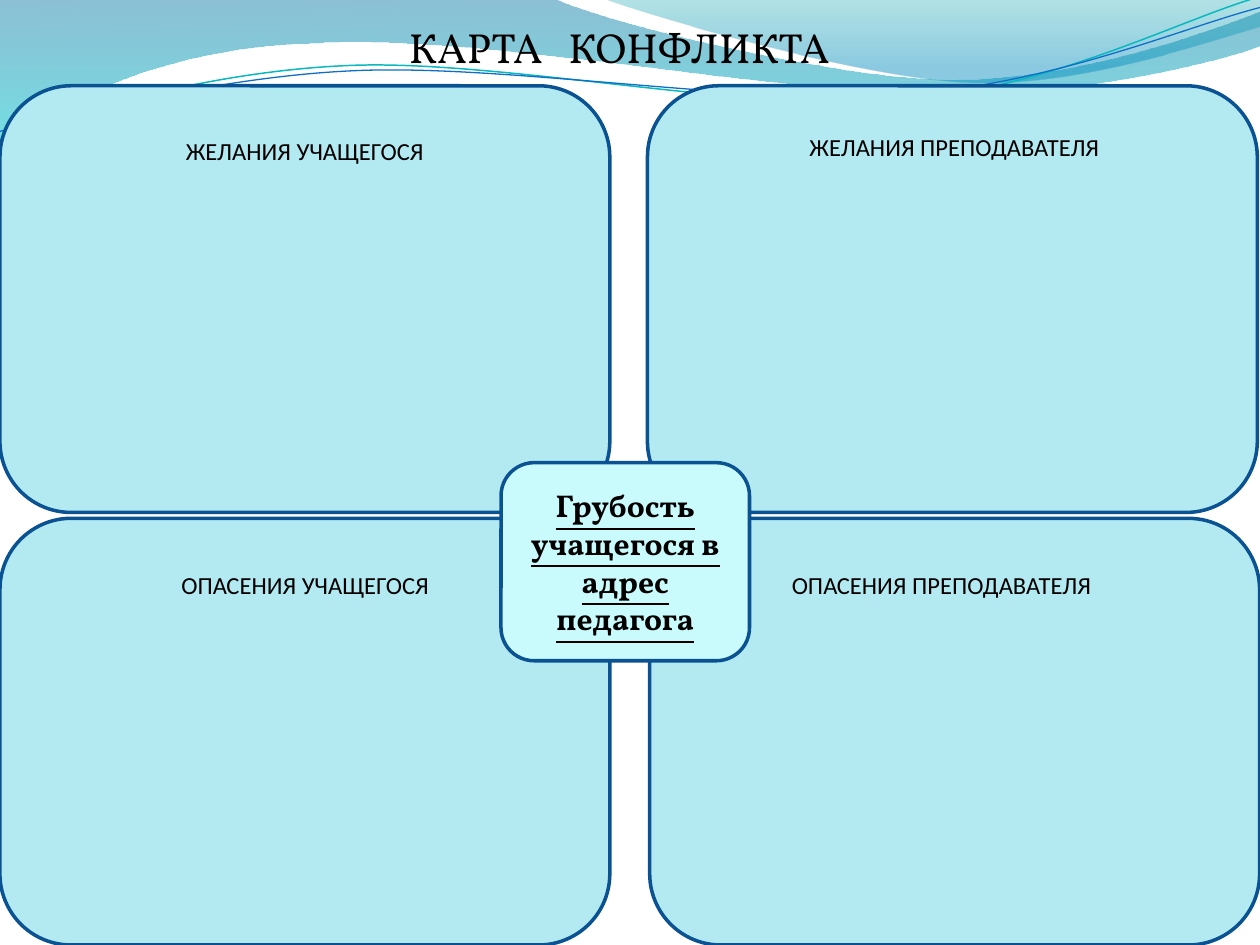
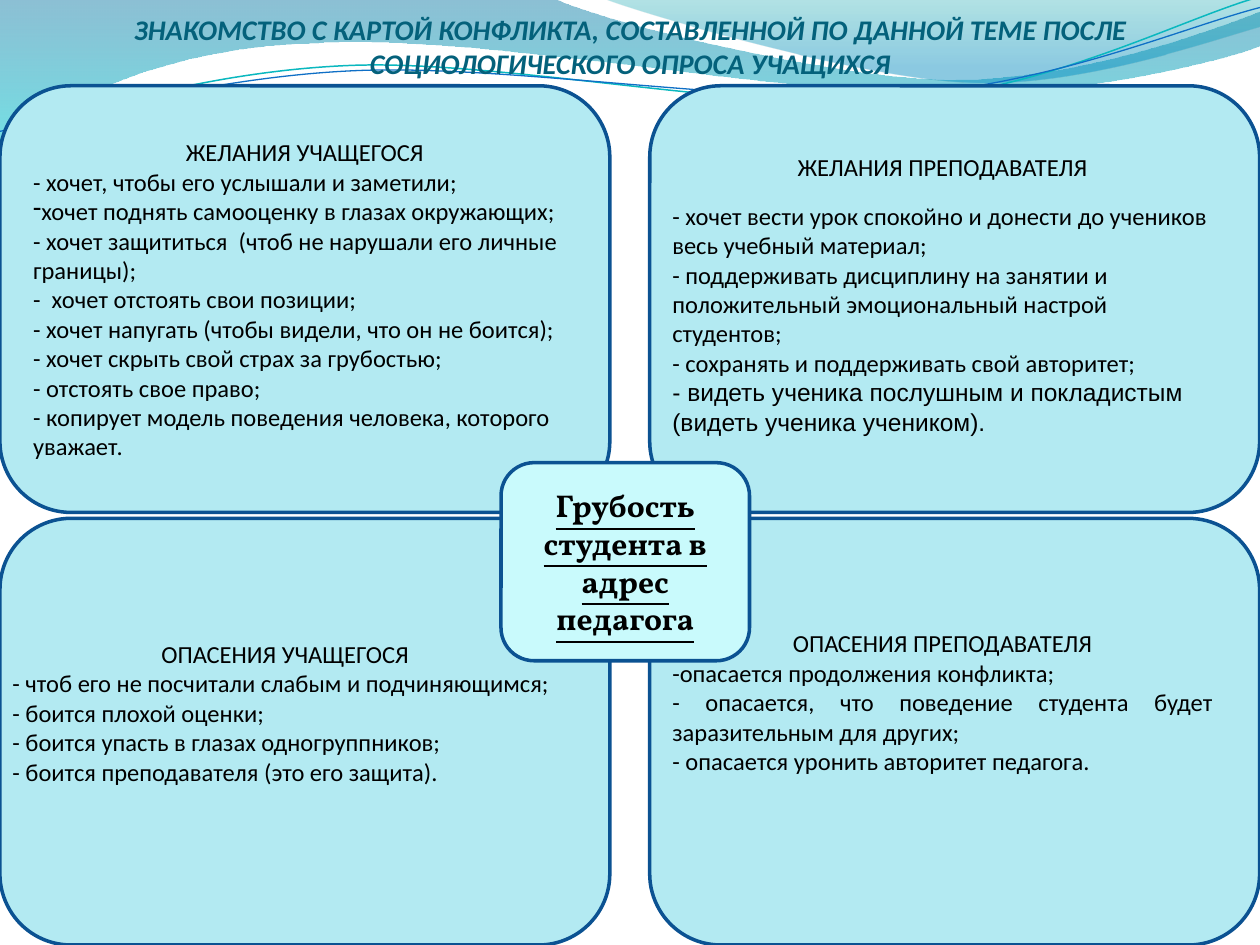
from dataclasses import dataclass
from lxml import etree
from pptx import Presentation
from pptx.dml.color import RGBColor
from pptx.enum import shapes, text
from pptx.oxml import ns
from pptx.util import Pt

BLACK = RGBColor(0x00, 0x00, 0x00)
TITLE_TEAL = RGBColor(0x04, 0x61, 0x7B)
PANEL_FILL = RGBColor(0xB3, 0xEA, 0xF2)
CENTRE_FILL = RGBColor(0xC9, 0xFA, 0xFC)
OUTLINE = RGBColor(0x0B, 0x52, 0x92)
WAVE_BLUE = RGBColor(0x00, 0x74, 0xA1)
WAVE_CYAN = RGBColor(0x00, 0xC6, 0xCF)
CREST_GREEN = RGBColor(0x00, 0xA1, 0xA9)
CREST_BLUE = RGBColor(0x00, 0x8B, 0xBF)
THREAD_TEAL = RGBColor(0x0A, 0xB8, 0xBF)
THREAD_BLUE = RGBColor(0x0F, 0x6F, 0xC6)

BODY, DISPLAY = "Calibri", "Vollkorn"
LEFT, CENTER, JUSTIFY = (text.PP_ALIGN.LEFT, text.PP_ALIGN.CENTER, text.PP_ALIGN.JUSTIFY)
TOP, MIDDLE = text.MSO_ANCHOR.TOP, text.MSO_ANCHOR.MIDDLE
BULLET = "•"  # marks a line that gets a dash as its bullet

PANEL_W, PANEL_H = 348.5, 243.8
PANEL_CORNERS = [(x, y) for y in (49, 296.2) for x in (0, 371.3)]
CENTRE_BOX = (286.3, 264.4, 142, 113.2)

# A segment holds x, y of a line end, or the two handles and the end of a curve.
WAVE = [(0, 0), (316.8, -0.7), (342.7, 12.2, 478.1, 45.4, 545.8, 45.4),
        (614.2, 45.4, 689.8, 18.7, 720, 6.5), (720.7, 25.9),
        (707.8, 31.7, 626.4, 54.7, 537.1, 54), (447.8, 54, 275, 20.2, 185, 24.5),
        (92.9, 25.9, 33.1, 59.8, -0.7, 81.4), (0, 0)]
CREST = [(344.9, -0.7), (366.5, 7.9, 491, 44.6, 553.7, 46.8),
         (616.3, 49.7, 691.9, 23, 720, 15.1), (720, 0), (344.9, -0.7)]
THREAD_TILT = 357.3
THREADS = [
    ([(-1.4, 63), (33.8, 51.7, 114.1, 29.4, 199.8, 29.9),
      (284.8, 30.3, 425.8, 67.3, 512.4, 64.9),
      (599.1, 62.4, 676.5, 25.7, 720.2, 15.5)], THREAD_TEAL, 0.85),
    ([(-1.1, 58), (32.9, 53.8, 118.3, 32.5, 204.1, 33),
      (290.6, 33.4, 429.7, 63.8, 515.5, 61.4),
      (601.4, 59.6, 678.5, 30.1, 721.4, 21.3)], THREAD_BLUE, 0.75),
]


@dataclass
class Quadrant:
    """One panel; text_box is relative to the panel, None puts the text in it."""
    heading: str
    lines: tuple = ()
    text_box: tuple = None
    align: int = LEFT
    anchor: int = MIDDLE
    heading_gap: float = 0
    margin_top: float = 3.6
    last_font: str = BODY
    shift: float = 0


EMPTY_MAP = [
    Quadrant("ЖЕЛАНИЯ УЧАЩЕГОСЯ", anchor=TOP, margin_top=17),
    Quadrant("ЖЕЛАНИЯ ПРЕПОДАВАТЕЛЯ", text_box=(13.9, 23, 323, 35), anchor=TOP, shift=-1.3),
    Quadrant("ОПАСЕНИЯ УЧАЩЕГОСЯ", text_box=(11.4, 25.8, 326, 25), anchor=TOP),
    Quadrant("ОПАСЕНИЯ ПРЕПОДАВАТЕЛЯ", text_box=(5.2, 25.8, 323, 46), anchor=TOP),
]
FILLED_MAP = [
    Quadrant("ЖЕЛАНИЯ УЧАЩЕГОСЯ", (
        "- хочет, чтобы его услышали и заметили;",
        BULLET + "хочет поднять самооценку в глазах окружающих;",
        "- хочет защититься  (чтоб не нарушали его личные границы);",
        "-  хочет отстоять свои позиции;",
        "- хочет напугать (чтобы видели, что он не боится);",
        "- хочет скрыть свой страх за грубостью;",
        "- отстоять свое право;",
        "- копирует модель поведения человека, которого уважает.")),
    Quadrant("ЖЕЛАНИЯ ПРЕПОДАВАТЕЛЯ", (
        "- хочет вести урок спокойно и донести до учеников весь учебный материал;",
        "- поддерживать дисциплину на занятии и положительный эмоциональный "
        "настрой студентов;",
        "- сохранять и поддерживать свой авторитет;",
        "- видеть ученика послушным и покладистым (видеть ученика учеником)."),
        text_box=(5.8, 33.8, 323, 170.6), heading_gap=11, last_font="Arial"),
    Quadrant("ОПАСЕНИЯ УЧАЩЕГОСЯ", (
        "- чтоб его не посчитали слабым и подчиняющимся;",
        "- боится плохой оценки;",
        "- боится упасть в глазах одногруппников;",
        "- боится преподавателя (это его защита)."),
        text_box=(0, 65, 326, 92), align=JUSTIFY),
    Quadrant("ОПАСЕНИЯ ПРЕПОДАВАТЕЛЯ", (
        "-опасается продолжения конфликта;",
        "- опасается, что поведение студента будет заразительным для других;",
        "- опасается уронить авторитет педагога."),
        text_box=(5.8, 57.8, 323, 94.2), align=JUSTIFY),
]


def add_run(p, words, color=BLACK, **font):
    r = p.add_run()
    r.text = words
    r.font.color.rgb = color
    for name, value in font.items():
        setattr(r.font, name, value)
    return r


def next_paragraph(tf, align):
    p = tf.paragraphs[0]
    if p.runs:
        p = tf.add_paragraph()
    p.alignment = align
    return p


def add_line(tf, line, align, font):
    p = next_paragraph(tf, align)
    if line.startswith(BULLET):
        props = p._p.get_or_add_pPr()
        etree.SubElement(props, ns.qn("a:buChar")).set("char", "-")
    add_run(p, line.removeprefix(BULLET), name=font, size=Pt(14))


def add_text_box(slide, box, wrap=True):
    tf = slide.shapes.add_textbox(*map(Pt, box)).text_frame
    tf.word_wrap = wrap
    return tf


def add_rounded_box(slide, box, fill):
    sp = slide.shapes.add_shape(shapes.MSO_SHAPE.ROUNDED_RECTANGLE, *map(Pt, box))
    sp.shadow.inherit = False
    sp.fill.solid()
    sp.fill.fore_color.rgb = fill
    sp.line.color.rgb = OUTLINE
    sp.line.width = Pt(2)
    return sp.text_frame


def bend(sp, segments):
    """Turn the straight pieces of a freeform into curves where handles are given."""
    pieces = list(sp.element.iter(ns.qn("a:lnTo")))
    for piece, seg in zip(pieces, segments[1:]):
        if len(seg) == 2:
            continue
        piece.tag = ns.qn("a:cubicBezTo")
        for i in (2, 0):
            handle = etree.Element(ns.qn("a:pt"))
            handle.set("x", str(Pt(seg[i]) - sp.left))
            handle.set("y", str(Pt(seg[i + 1]) - sp.top))
            piece.insert(0, handle)


def add_outline(slide, segments, close):
    ends = [(Pt(seg[-2]), Pt(seg[-1])) for seg in segments]
    builder = slide.shapes.build_freeform(*ends[0], scale=1.0)
    builder.add_line_segments(ends[1:], close=close)
    sp = builder.convert_to_shape()
    bend(sp, segments)
    sp.shadow.inherit = False
    return sp


def add_gradient_wave(slide, segments, stops):
    """Stops are (position, colour, opacity in percent), from top to bottom."""
    sp = add_outline(slide, segments, True)
    sp.line.fill.background()
    sp.fill.gradient()
    sp.fill.gradient_angle = 270
    for stop, (position, color, _) in zip(sp.fill.gradient_stops, stops):
        stop.position = position
        stop.color.rgb = color
    colors = sp.element.iter(ns.qn("a:srgbClr"))
    for clr, (_, _, opacity) in zip(colors, stops):
        etree.SubElement(clr, ns.qn("a:alpha")).set("val", str(opacity * 1000))
    return sp


def add_thread(slide, segments, color, width):
    sp = add_outline(slide, segments, False)
    sp.rotation = THREAD_TILT
    sp.fill.background()
    sp.line.color.rgb = color
    sp.line.width = Pt(width)
    return sp


def move_waves_to_layout(slide):
    """Draw the top waves on a slide and hand them to its layout."""
    waves = [
        add_gradient_wave(slide, WAVE, [(0, WAVE_BLUE, 45), (1, WAVE_CYAN, 55)]),
        add_gradient_wave(slide, CREST, [(0, CREST_GREEN, 30), (0.8, CREST_BLUE, 45)]),
    ] + [add_thread(slide, *thread) for thread in THREADS]
    for sp in waves:
        slide.slide_layout.shapes.element.append(sp.element)


def add_quadrant(slide, corner, q):
    x, y = corner[0] + q.shift, corner[1]
    tf = add_rounded_box(slide, (x, y, PANEL_W, PANEL_H), PANEL_FILL)
    if q.text_box:
        dx, dy, w, h = q.text_box
        tf = add_text_box(slide, (x + dx, y + dy, w, h))
    tf.vertical_anchor = q.anchor
    tf.margin_top = Pt(q.margin_top)
    add_line(tf, q.heading, CENTER, BODY)
    if q.heading_gap:
        tf.paragraphs[0].space_after = Pt(q.heading_gap)
    for line in q.lines:
        add_line(tf, line, q.align, q.last_font if line == q.lines[-1] else BODY)


def add_conflict_map(slide, quadrants, topic):
    for corner, q in zip(PANEL_CORNERS, quadrants):
        add_quadrant(slide, corner, q)
    tf = add_rounded_box(slide, CENTRE_BOX, CENTRE_FILL)
    tf.vertical_anchor = MIDDLE
    add_run(next_paragraph(tf, CENTER), topic,
            name=DISPLAY, size=Pt(18), bold=True, underline=True)


def add_short_title(slide):
    p = next_paragraph(add_text_box(slide, (226.6, 9, 261, 36), wrap=False), LEFT)
    font = dict(name=DISPLAY, size=Pt(24))
    add_run(p, "КАРТА", **font)
    gap = add_run(p, " ", **font)
    gap.font._element.set("spc", "1000")
    add_run(p, "КОНФЛИКТА", **font)


def add_long_title(slide):
    tf = add_text_box(slide, (36, 3.6, 648, 44))
    tf.margin_left = tf.margin_right = 0
    add_run(next_paragraph(tf, CENTER),
            "ЗНАКОМСТВО С КАРТОЙ КОНФЛИКТА, СОСТАВЛЕННОЙ ПО ДАННОЙ ТЕМЕ ПОСЛЕ "
            "СОЦИОЛОГИЧЕСКОГО ОПРОСА УЧАЩИХСЯ",
            TITLE_TEAL, name=BODY, size=Pt(16.2), bold=True, italic=True)


def main():
    prs = Presentation()
    prs.slide_width, prs.slide_height = Pt(720), Pt(540)
    blank = prs.slide_layouts[6]

    slide = prs.slides.add_slide(blank)
    move_waves_to_layout(slide)
    add_conflict_map(slide, EMPTY_MAP, "Грубость учащегося в адрес педагога")
    add_short_title(slide)

    slide = prs.slides.add_slide(blank)
    add_long_title(slide)
    add_conflict_map(slide, FILLED_MAP, "Грубость студента в адрес педагога")

    prs.save("out.pptx")


if __name__ == "__main__":
    main()
